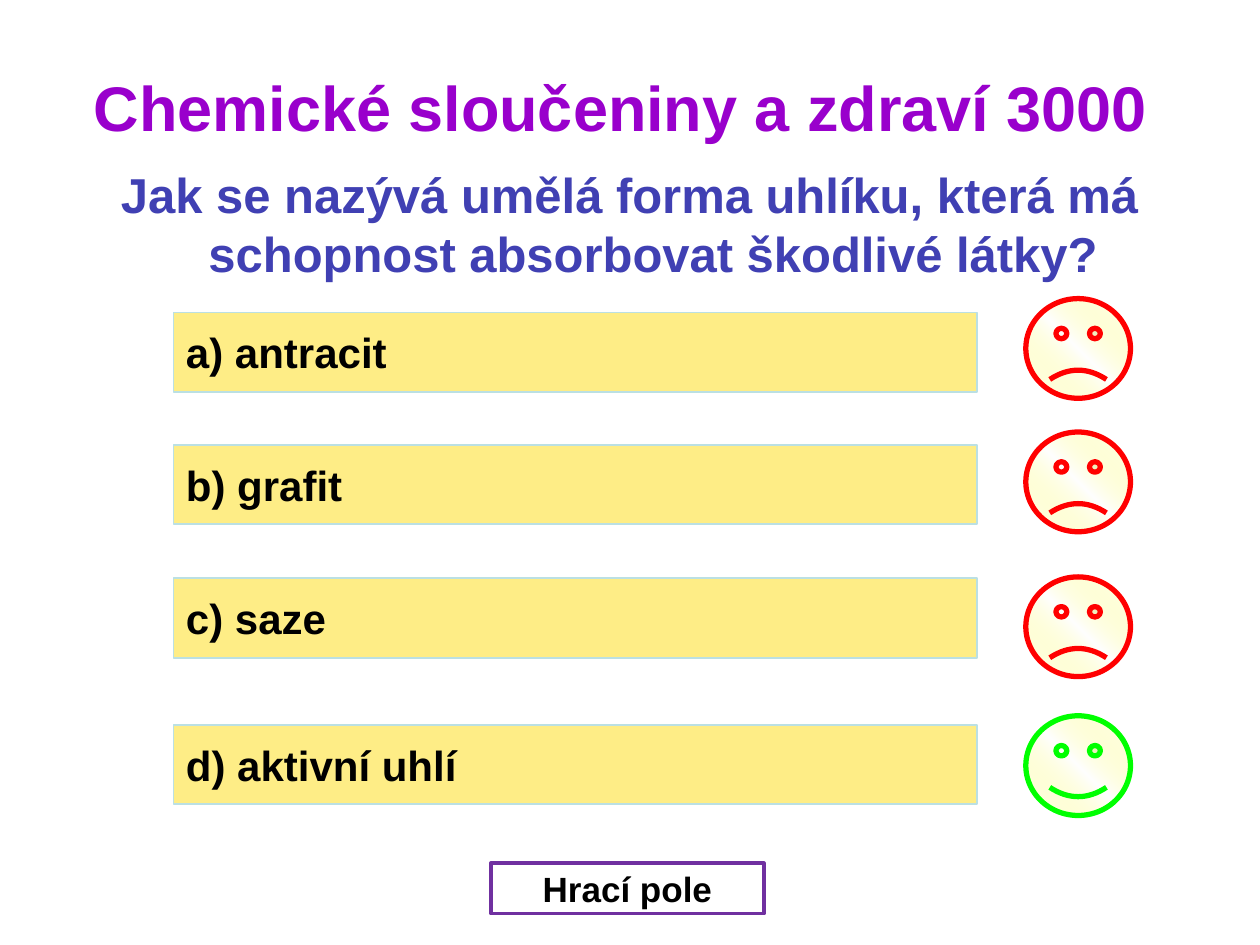
from lxml import etree
from pptx import Presentation
from pptx import util as u
from pptx.dml.color import RGBColor
from pptx.enum import shapes, text
from pptx.oxml import parse_xml
from pptx.oxml.ns import nsdecls, qn

FACE_FILL = f"""<a:gradFill {nsdecls('a')} rotWithShape="1"><a:gsLst>
<a:gs pos="0"><a:srgbClr val="FFFFFF"/></a:gs>
<a:gs pos="50000"><a:srgbClr val="FFFF66"><a:alpha val="0"/></a:srgbClr></a:gs>
<a:gs pos="100000"><a:srgbClr val="FFFFFF"/></a:gs>
</a:gsLst><a:lin ang="18900000" scaled="1"/></a:gradFill>"""


def style_font(paragraph, size, color):
    font = paragraph.font
    font.name, font.size, font.bold = "Arial", u.Pt(size), True
    font.color.rgb = RGBColor.from_string(color)


def add_button(label, left, top, width, height, fill, line, line_width, size, align):
    button = page.shapes.add_shape(shapes.MSO_SHAPE.ACTION_BUTTON_CUSTOM,
                                   u.Cm(left), u.Cm(top), u.Cm(width), u.Cm(height))
    button.shadow.inherit = False
    button.fill.solid()
    button.fill.fore_color.rgb = RGBColor.from_string(fill)
    button.line.color.rgb = RGBColor.from_string(line)
    button.line.width = u.Pt(line_width)
    frame = button.text_frame
    frame.word_wrap = False
    frame.vertical_anchor = text.MSO_ANCHOR.MIDDLE
    frame.text = label
    frame.paragraphs[0].alignment = align
    style_font(frame.paragraphs[0], size, "000000")


deck = Presentation()
deck.slide_width, deck.slide_height = u.Cm(25.4), u.Cm(19.05)
page = deck.slides.add_slide(deck.slide_layouts[5])

# Heading and question
title = page.shapes.title
title.left, title.top, title.width, title.height = u.Cm(0.69), u.Cm(1.25), u.Cm(24), u.Cm(4.24)
frame = title.text_frame
frame.word_wrap = True
frame.auto_size = text.MSO_AUTO_SIZE.NONE
frame.vertical_anchor = text.MSO_ANCHOR.TOP
frame.text = ("Chemické sloučeniny a zdraví 3000 \n"
              "Jak se nazývá umělá forma uhlíku, která má schopnost absorbovat škodlivé látky?")
for paragraph, size, color, before in zip(frame.paragraphs, (36, 28), ("9900CC", "4040B3"), (0, 12)):
    paragraph.alignment = text.PP_ALIGN.CENTER
    paragraph.space_before = u.Pt(before)
    properties = paragraph._p.get_or_add_pPr()
    properties.set("marL", str(u.Cm(0.95)))
    properties.set("indent", str(-u.Cm(0.95)))
    style_font(paragraph, size, color)

# Answers, each with a face: label, button top, face top, correct
answers = [
    ("a) antracit", 6.3, 6.02, False),
    ("b) grafit", 8.97, 8.71, False),
    ("c) saze", 11.66, 11.63, False),
    ("d) aktivní uhlí", 14.61, 14.43, True),
]
for label, button_top, face_top, correct in answers:
    add_button(label, 3.5, button_top, 16.2, 1.6, "FEED86", "BBE0E3", 1, 24, text.PP_ALIGN.LEFT)
    face = page.shapes.add_shape(shapes.MSO_SHAPE.SMILEY_FACE,
                                 u.Cm(20.68), u.Cm(face_top), u.Cm(2.11), u.Cm(2.01))
    face.shadow.inherit = False
    face.adjustments[0] = 0.047 if correct else -0.047
    face.line.color.rgb = RGBColor.from_string("00FF00" if correct else "FF0000")
    face.line.width = u.Pt(3)
    face._element.spPr.find(qn("a:prstGeom")).addnext(parse_xml(FACE_FILL))

add_button("Hrací pole", 9.9, 17.4, 5.5, 1.02, "FFFFFF", "7030A0", 2, 20, text.PP_ALIGN.CENTER)

deck.save("out.pptx")
